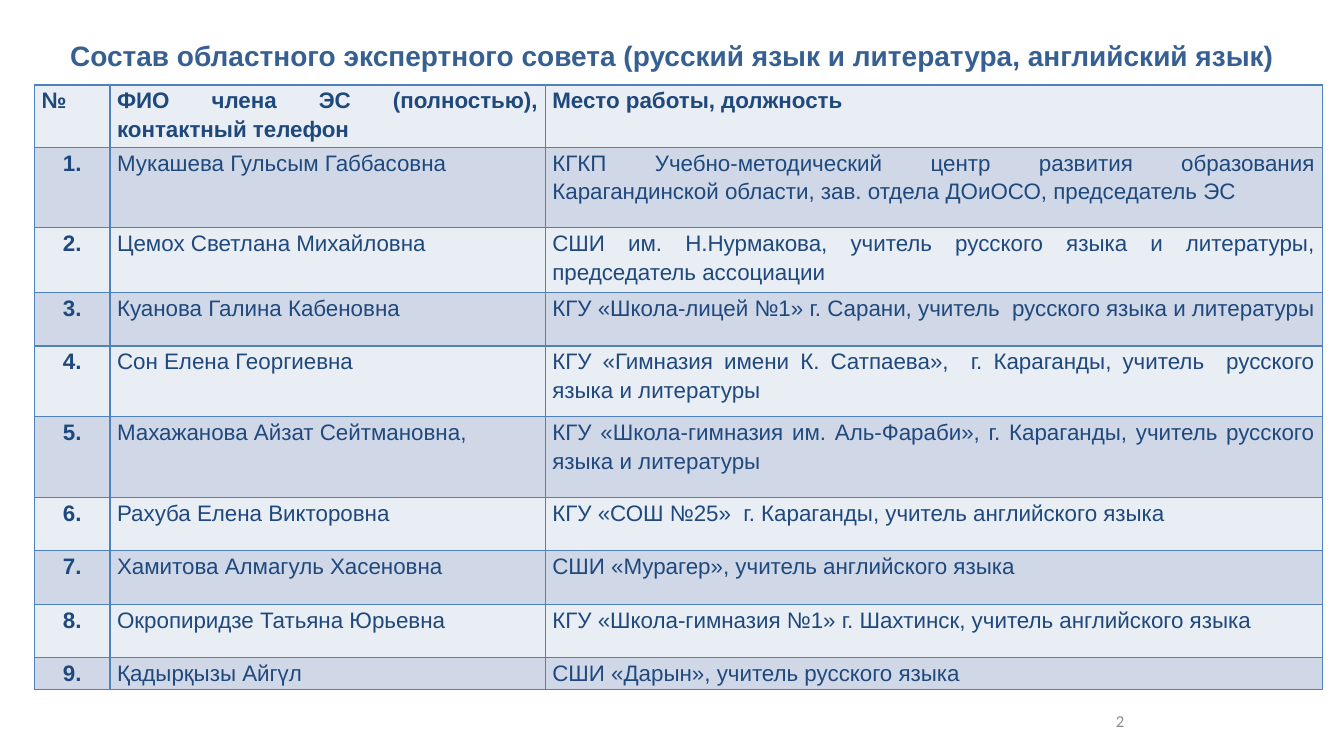
from lxml.etree import SubElement
from pptx import Presentation
from pptx.dml.color import RGBColor
from pptx.enum.text import MSO_ANCHOR, PP_ALIGN
from pptx.oxml.ns import qn
from pptx.util import Cm, Pt

HEADER = ("№", "ФИО члена ЭС (полностью), контактный телефон", "Место работы, должность")
MEMBERS = [
    ("Мукашева Гульсым Габбасовна",
     "КГКП Учебно-методический центр развития образования Карагандинской области, "
     "зав. отдела ДОиОСО, председатель ЭС"),
    ("Цемох Светлана Михайловна",
     "СШИ им. Н.Нурмакова, учитель русского языка и литературы, председатель ассоциации"),
    ("Куанова Галина Кабеновна",
     "КГУ «Школа-лицей №1» г. Сарани, учитель  русского языка и литературы"),
    ("Сон Елена Георгиевна",
     "КГУ «Гимназия имени К. Сатпаева»,  г. Караганды, учитель  русского языка и литературы"),
    ("Махажанова Айзат Сейтмановна,",
     "КГУ «Школа-гимназия им. Аль-Фараби», г. Караганды, учитель русского языка и литературы"),
    ("Рахуба Елена Викторовна", "КГУ «СОШ №25»  г. Караганды, учитель английского языка"),
    ("Хамитова Алмагуль Хасеновна", "СШИ «Мурагер», учитель английского языка"),
    ("Окропиридзе Татьяна Юрьевна",
     "КГУ «Школа-гимназия №1» г. Шахтинск, учитель английского языка"),
    ("Қадырқызы Айгүл", "СШИ «Дарын», учитель русского языка"),
]
COLUMN_WIDTHS = (1.9, 10.97, 19.58)
ROW_HEIGHTS = (1.57, 2.03, 1.63, 1.35, 1.78, 2.03, 1.35, 1.35, 1.35, 0.79)
BAND_FILLS = ("E9EDF4", "D0D8E8")
BORDER_COLOR = "4F81BD"


def color(value):
    """Turn a hex string into a colour."""
    return RGBColor.from_string(value)


def write(text_frame, text, size=16, font="Arial", fill="1F497D", bold=False,
          align=PP_ALIGN.CENTER, spacing=1.0):
    """Write one formatted paragraph into a text frame."""
    text_frame.word_wrap = True
    paragraph = text_frame.paragraphs[0]
    paragraph.alignment = align
    paragraph.line_spacing = spacing
    run = paragraph.add_run()
    run.text = text
    run.font.size = Pt(size)
    run.font.name = font
    run.font.bold = bold
    run.font.color.rgb = color(fill)


def add_label(slide, box, text, **text_format):
    """Place a vertically centred line of text in a box given in centimetres."""
    shape = slide.shapes.add_textbox(*map(Cm, box))
    shape.text_frame.vertical_anchor = MSO_ANCHOR.MIDDLE
    write(shape.text_frame, text, **text_format)


def add_borders(cell):
    """Draw a thin line on all four sides of a cell."""
    properties = cell._tc.get_or_add_tcPr()
    for side in ("a:lnL", "a:lnR", "a:lnT", "a:lnB"):
        line = SubElement(properties, qn(side), w=str(Pt(1)))
        fill = SubElement(line, qn("a:solidFill"))
        SubElement(fill, qn("a:srgbClr"), val=BORDER_COLOR)


def fill_cell(cell, text, band, **text_format):
    """Give a cell its text, margins, borders and band colour."""
    cell.margin_left = cell.margin_right = Cm(0.18)
    cell.margin_top = cell.margin_bottom = Cm(0)
    add_borders(cell)
    cell.fill.solid()
    cell.fill.fore_color.rgb = color(band)
    write(cell.text_frame, text, spacing=1.15, **text_format)


def add_council_table(slide, left, top):
    """Build the table of council members from its top left corner."""
    rows = [HEADER] + [(f"{number}.", *member) for number, member in enumerate(MEMBERS, 1)]
    frame = slide.shapes.add_table(
        len(rows), len(HEADER), Cm(left), Cm(top),
        Cm(sum(COLUMN_WIDTHS)), Cm(sum(ROW_HEIGHTS)))
    table = frame.table
    table.first_row = table.horz_banding = False
    for column, width in zip(table.columns, COLUMN_WIDTHS):
        column.width = Cm(width)
    for row_index, (texts, height) in enumerate(zip(rows, ROW_HEIGHTS)):
        table.rows[row_index].height = Cm(height)
        for column_index, text in enumerate(texts):
            is_header, is_number = row_index == 0, column_index == 0
            centred = is_number and not is_header
            fill_cell(table.cell(row_index, column_index), text, BAND_FILLS[row_index % 2],
                      bold=is_header or is_number,
                      align=PP_ALIGN.CENTER if centred else PP_ALIGN.JUSTIFY)


def main():
    """Build and save the presentation."""
    presentation = Presentation()
    presentation.slide_width, presentation.slide_height = Cm(33.87), Cm(19.05)
    slide = presentation.slides.add_slide(presentation.slide_layouts[6])
    add_label(slide, (1.19, 0.79, 31.5, 1.22),
              "Состав областного экспертного совета (русский язык и литература, английский язык)",
              size=20, fill="376092", bold=True)
    add_council_table(slide, 0.87, 2.14)
    add_label(slide, (24.28, 17.65, 7.9, 1.02), "2", size=12, font="Calibri", fill="8C8C8C")
    presentation.save("out.pptx")


if __name__ == "__main__":
    main()
